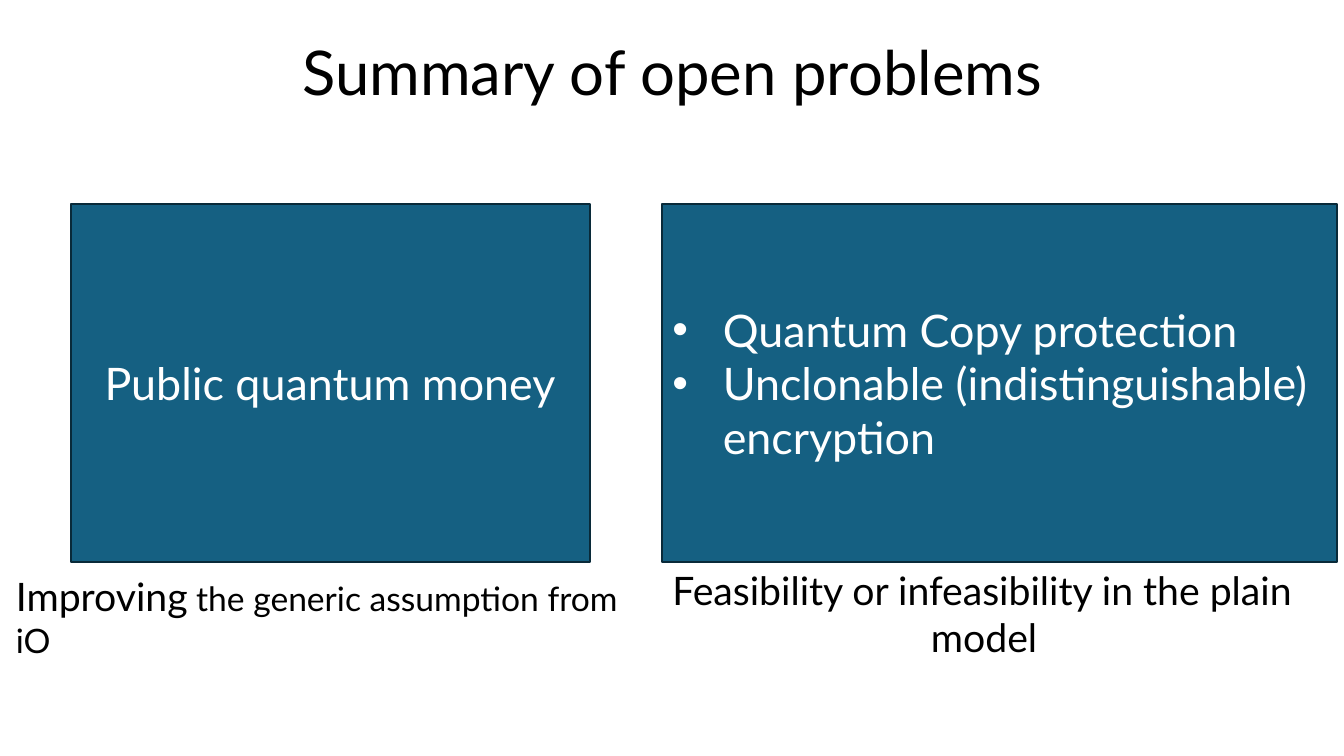
"""Build the slide that summarises the open problems."""
from pptx import Presentation
from pptx import util as u
from pptx.dml import color
from pptx.enum import shapes, text
from pptx.oxml import xmlchemy  # noqa: F401
from lxml import etree

COLORS = {"panel": "156082", "edge": "092A39", "ink": "000000", "light": "FFFFFF"}
DRAWING = "{http://schemas.openxmlformats.org/drawingml/2006/main}"
LEFT, CENTER = text.PP_ALIGN.LEFT, text.PP_ALIGN.CENTER


def write(paragraph, runs, size=28, ink="ink", align=LEFT, bullet=False, spacing=None):
    """Fill a paragraph with (words, size) runs or one plain string."""
    paragraph.alignment = align
    if spacing:
        paragraph.line_spacing = spacing
    if bullet:
        properties = paragraph._p.get_or_add_pPr()
        properties.set("marL", str(u.Inches(0.5)))
        properties.set("indent", str(-u.Inches(0.5)))
        etree.SubElement(properties, DRAWING + "buFont", typeface="Arial")
        etree.SubElement(properties, DRAWING + "buChar", char="•")
    for words, points in [(runs, size)] if isinstance(runs, str) else runs:
        run = paragraph.add_run()
        run.text = words
        run.font.name = "Lato"
        run.font.size = u.Pt(points)
        run.font.color.rgb = color.RGBColor.from_string(COLORS[ink])


class SlideBuilder:
    """Holds the current slide and draws its elements in one style."""

    def __init__(self, presentation):
        self.slide = presentation.slides.add_slide(presentation.slide_layouts[6])

    def fill_frame(self, shape, paragraphs, anchor):
        """Write a list of (runs, format) paragraphs into a shape."""
        frame = shape.text_frame
        frame.word_wrap = True
        frame.vertical_anchor = anchor
        for index, (runs, style) in enumerate(paragraphs):
            paragraph = frame.add_paragraph() if index else frame.paragraphs[0]
            write(paragraph, runs, **style)

    def label(self, box, paragraphs, anchor=text.MSO_ANCHOR.TOP):
        """Add a plain text box."""
        shape = self.slide.shapes.add_textbox(*map(u.Inches, box))
        self.fill_frame(shape, paragraphs, anchor)

    def panel(self, left, width, paragraphs):
        """Add a filled panel in the common row."""
        box = map(u.Inches, (left, 2.02, width, 3.56))
        shape = self.slide.shapes.add_shape(shapes.MSO_SHAPE.RECTANGLE, *box)
        shape.shadow.inherit = False
        shape.fill.solid()
        shape.fill.fore_color.rgb = color.RGBColor.from_string(COLORS["panel"])
        shape.line.color.rgb = color.RGBColor.from_string(COLORS["edge"])
        shape.line.width = u.Pt(1.5)
        self.fill_frame(shape, paragraphs, text.MSO_ANCHOR.MIDDLE)


def main():
    """Draw the slide and save it."""
    presentation = Presentation()
    presentation.slide_width = u.Inches(13.33)
    presentation.slide_height = u.Inches(7.5)
    builder = SlideBuilder(presentation)
    panel_text = {"size": 32, "ink": "light"}
    bullet_text = {**panel_text, "bullet": True}

    builder.label(
        (0.92, 0.02, 11.5, 1.45),
        [("Summary of open problems", {"size": 44, "align": CENTER, "spacing": 0.9})],
        text.MSO_ANCHOR.MIDDLE,
    )
    builder.panel(0.7, 5.15, [("Public quantum money", {**panel_text, "align": CENTER})])
    builder.panel(6.57, 6.69, [
        ("Quantum Copy protection", bullet_text),
        ("Unclonable (indistinguishable) encryption", bullet_text),
    ])
    builder.label((0.06, 5.63, 6.5, 0.57), [
        ([("Improving", 28), (" the generic assumption from iO", 24)], {}),
    ])
    builder.label((6.57, 5.57, 6.38, 1.04), [
        ("Feasibility or infeasibility in the plain", {}),
        ("model", {"align": CENTER}),
    ])
    presentation.save("out.pptx")


if __name__ == "__main__":
    main()
